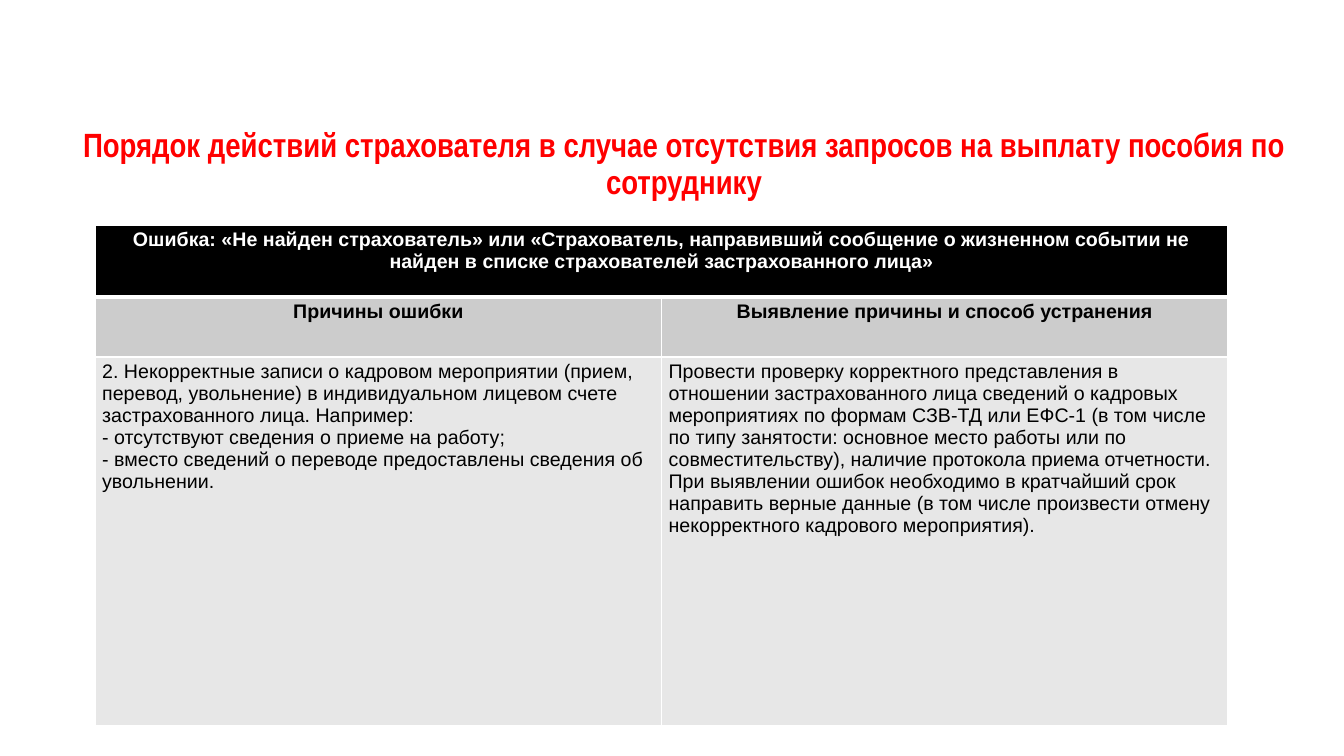
from lxml.etree import SubElement
from pptx import Presentation
from pptx.dml.color import RGBColor
from pptx.enum.text import MSO_ANCHOR as Anchor, PP_ALIGN as Align
from pptx.oxml.ns import qn
from pptx.util import Pt


def color(hex_value):
    return RGBColor.from_string(hex_value)


class ErrorSlide:
    TITLE = dict(name="Arial Narrow", size=Pt(24), bold=True)
    CELL = dict(name="Arial", size=Pt(14))
    MARGINS = dict(margin_left=Pt(5), margin_right=Pt(5),
                   margin_top=Pt(2.7), margin_bottom=Pt(2.7))
    BORDER = "FFFFFF"

    def __init__(self, deck):
        self.slide = deck.slides.add_slide(deck.slide_layouts[6])

    def fill_text(self, frame, lines, font, ink, align, spacing=None):
        for number, line in enumerate(lines):
            paragraph = frame.paragraphs[0] if number == 0 else frame.add_paragraph()
            paragraph.alignment = align
            paragraph.line_spacing = spacing
            run = paragraph.add_run()
            run.text = line
            for key, value in font.items():
                setattr(run.font, key, value)
            run.font.color.rgb = color(ink)

    def title(self, text, left, top, width, height):
        box = self.slide.shapes.add_textbox(Pt(left), Pt(top), Pt(width), Pt(height))
        box.text_frame.word_wrap = True
        box.text_frame.vertical_anchor = Anchor.MIDDLE
        self.fill_text(box.text_frame, [text], self.TITLE, "FF0000", Align.CENTER, 0.9)

    def table(self, left, top, columns, rows):
        frame = self.slide.shapes.add_table(
            len(rows), len(columns), Pt(left), Pt(top), Pt(sum(columns)), Pt(sum(rows)))
        for column, width in zip(frame.table.columns, columns):
            column.width = Pt(width)
        for row, height in zip(frame.table.rows, rows):
            row.height = Pt(height)
        return frame.table

    def cell(self, cell, lines, fill, ink="000000", bold=False, align=Align.LEFT, bottom=1):
        for key, value in self.MARGINS.items():
            setattr(cell, key, value)
        self.fill_text(cell.text_frame, lines, {**self.CELL, "bold": bold}, ink, align)
        self.borders(cell, bottom)
        cell.fill.solid()
        cell.fill.fore_color.rgb = color(fill)

    def borders(self, cell, bottom):
        properties = cell._tc.get_or_add_tcPr()
        for side, width in dict(L=1, R=1, T=1, B=bottom).items():
            line = SubElement(properties, qn(f"a:ln{side}"), w=str(Pt(width)))
            paint = SubElement(line, qn("a:solidFill"))
            SubElement(paint, qn("a:srgbClr"), val=self.BORDER)


def main():
    deck = Presentation()
    deck.slide_width, deck.slide_height = Pt(960), Pt(540)
    page = ErrorSlide(deck)

    # Error table
    table = page.table(68, 160.7, [404.6, 404.6], [51.5, 42.8, 263.5])
    table.cell(0, 0).merge(table.cell(0, 1))
    page.cell(table.cell(0, 0), [
        "Ошибка: «Не найден страхователь» или «Страхователь, направивший сообщение "
        "о жизненном событии не найден в списке страхователей застрахованного лица»",
    ], "000000", "FFFFFF", True, Align.CENTER, bottom=3)

    # Column headings
    headings = ["Причины ошибки", "Выявление причины и способ устранения"]
    for column, heading in enumerate(headings):
        page.cell(table.cell(1, column), [heading], "CCCCCC", bold=True, align=Align.CENTER)

    # Cause and remedy
    cause = [
        "2. Некорректные записи о кадровом мероприятии (прием, перевод, увольнение) "
        "в индивидуальном лицевом счете застрахованного лица. Например:",
        "- отсутствуют сведения о приеме на работу;",
        "- вместо сведений о переводе предоставлены сведения об увольнении.",
    ]
    remedy = [
        "Провести проверку корректного представления в отношении застрахованного лица "
        "сведений о кадровых мероприятиях по формам СЗВ-ТД или ЕФС-1 (в том числе по типу "
        "занятости: основное место работы или по совместительству), наличие протокола "
        "приема отчетности.",
        "При выявлении ошибок необходимо в кратчайший срок направить верные данные "
        "(в том числе произвести отмену некорректного кадрового мероприятия).",
    ]
    for column, lines in enumerate([cause, remedy]):
        page.cell(table.cell(2, column), lines, "E7E7E7")

    # Title
    page.title("Порядок действий страхователя в случае отсутствия запросов "
               "на выплату пособия по сотруднику", 17.3, 88, 942.5, 60)

    deck.save("out.pptx")


if __name__ == "__main__":
    main()
